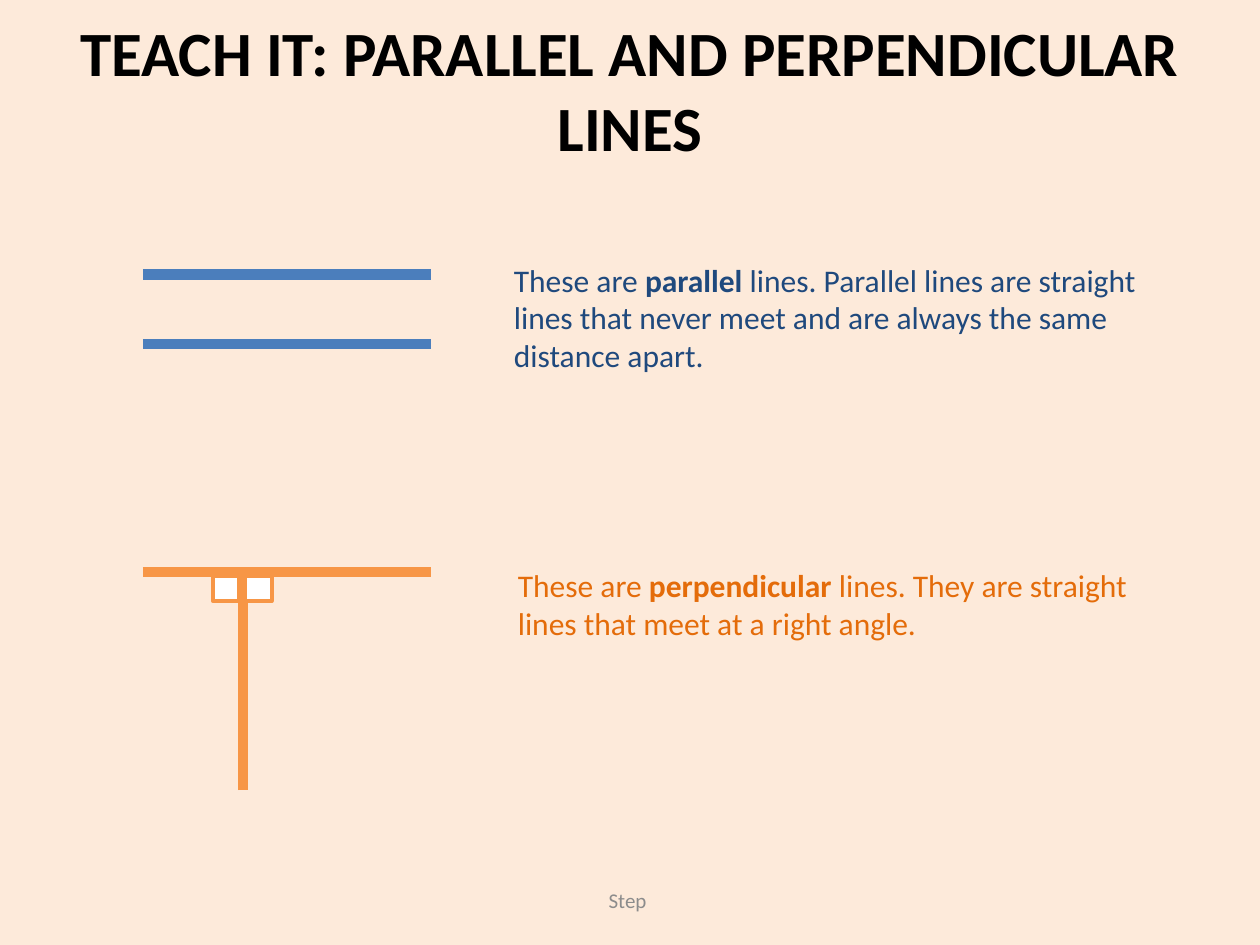
"""Build a lesson slide that explains parallel and perpendicular lines."""
from dataclasses import dataclass

from lxml.etree import SubElement
from pptx import Presentation
from pptx.dml.color import RGBColor
from pptx.enum.shapes import MSO_CONNECTOR as Connector, MSO_SHAPE as Shape
from pptx.enum.text import MSO_ANCHOR as Anchor, MSO_AUTO_SIZE as AutoSize, PP_ALIGN as Align
from pptx.oxml.ns import qn
from pptx.util import Cm, Pt


@dataclass(frozen=True)
class Theme:
    font: str = "Calibri"
    background: str = "FDEADA"
    title: str = "000000"
    footer: str = "8C8C8C"
    parallel_line: str = "4B7EBC"
    parallel_text: str = "1F497D"
    perpendicular_line: str = "F79646"
    perpendicular_text: str = "E46C0A"
    marker_fill: str = "FFFFFF"
    title_size: int = 36
    body_size: int = 18
    footer_size: int = 12
    line_width: int = 6
    marker_width: int = 2


class LessonSlide:
    def __init__(self, presentation, theme):
        self.theme = theme
        self.slide = presentation.slides.add_slide(presentation.slide_layouts[5])
        fill = self.slide.background.fill
        fill.solid()
        fill.fore_color.rgb = RGBColor.from_string(theme.background)

    def format_run(self, run, size, color, bold=False):
        run.font.name = self.theme.font
        run.font.size = Pt(size)
        run.font.bold = bold
        run.font.color.rgb = RGBColor.from_string(color)

    def title(self, text, left, top, width, height):
        shape = self.slide.shapes.title
        shape.left, shape.top, shape.width, shape.height = map(Cm, (left, top, width, height))
        shape.text_frame.text = text
        shape.text_frame.auto_size = AutoSize.NONE
        shape.text_frame.vertical_anchor = Anchor.MIDDLE
        paragraph = shape.text_frame.paragraphs[0]
        paragraph.alignment = Align.CENTER
        self.format_run(paragraph.runs[0], self.theme.title_size, self.theme.title, bold=True)

    def text_box(self, left, top, width, height):
        shape = self.slide.shapes.add_textbox(*map(Cm, (left, top, width, height)))
        shape.text_frame.word_wrap = True
        return shape.text_frame

    def footer(self, text, left, top, width, height):
        text_frame = self.text_box(left, top, width, height)
        text_frame.text = text
        text_frame.vertical_anchor = Anchor.MIDDLE
        paragraph = text_frame.paragraphs[0]
        paragraph.alignment = Align.CENTER
        self.format_run(paragraph.runs[0], self.theme.footer_size, self.theme.footer)

    def definition(self, before, term, after, color, left, top, width, height):
        text_frame = self.text_box(left, top, width, height)
        text_frame.auto_size = AutoSize.SHAPE_TO_FIT_TEXT
        for text in (before, term, after):
            run = text_frame.paragraphs[0].add_run()
            run.text = text
            self.format_run(run, self.theme.body_size, color, bold=text == term)

    def line(self, color, start_x, start_y, end_x, end_y):
        connector = self.slide.shapes.add_connector(
            Connector.STRAIGHT, *map(Cm, (start_x, start_y, end_x, end_y)))
        connector.line.color.rgb = RGBColor.from_string(color)
        connector.line.width = Pt(self.theme.line_width)
        SubElement(connector._element.spPr, qn("a:effectLst"))

    def angle_marker(self, left, top, width, height):
        shape = self.slide.shapes.add_shape(
            Shape.RECTANGLE, *map(Cm, (left, top, width, height)))
        shape.shadow.inherit = False
        shape.fill.solid()
        shape.fill.fore_color.rgb = RGBColor.from_string(self.theme.marker_fill)
        shape.line.color.rgb = RGBColor.from_string(self.theme.perpendicular_line)
        shape.line.width = Pt(self.theme.marker_width)


def main():
    presentation = Presentation()
    presentation.slide_width, presentation.slide_height = Cm(25.4), Cm(19.05)
    theme = Theme()
    lesson = LessonSlide(presentation, theme)

    line_left, line_right = 2.88, 8.68
    crossbar_y, stem_x, stem_bottom = 11.53, 4.9, 15.93

    lesson.footer("Step ", 8.68, 17.65, 8.04, 1.01)
    lesson.title("TEACH IT: PARALLEL AND PERPENDICULAR LINES", 1.27, 0.2, 22.86, 3.18)
    for line_y in (5.53, 6.93):
        lesson.line(theme.parallel_line, line_left, line_y, line_right, line_y)
    lesson.line(theme.perpendicular_line, line_left, crossbar_y, line_right, crossbar_y)
    lesson.line(theme.perpendicular_line, stem_x, stem_bottom, stem_x, crossbar_y)
    lesson.definition(
        "These are ", "parallel",
        " lines. Parallel lines are straight lines that never meet"
        " and are always the same distance apart.",
        theme.parallel_text, 10.11, 5.13, 13.59, 2.56)
    lesson.definition(
        "These are ", "perpendicular",
        " lines. They are straight lines that meet at a right angle.",
        theme.perpendicular_text, 10.19, 11.28, 13.59, 1.8)
    for marker_left in (4.95, 4.29):
        lesson.angle_marker(marker_left, 11.61, 0.53, 0.51)

    presentation.save("out.pptx")


if __name__ == "__main__":
    main()
